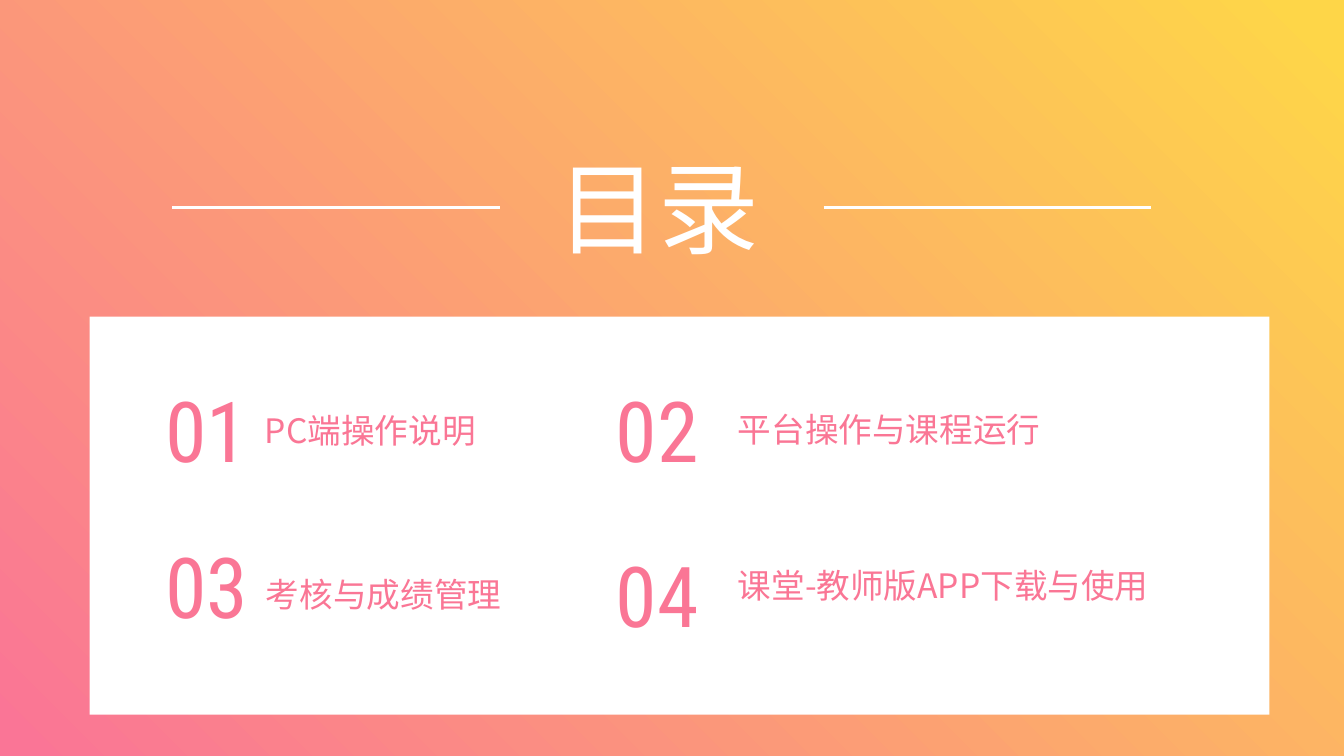
import pptx
import pptx.util
import pptx.dml.color
import pptx.enum.shapes
import pptx.enum.text
import lxml.etree
from dataclasses import dataclass
from pptx.util import Inches, Pt

# Content: number, number top, label, label left, label top, label width
TITLE = "目录"
ENTRIES = [
    ("01", 3.71, "PC端操作说明", 2.53, 4.02, 3.1),
    ("02", 3.71, "平台操作与课程运行", 7.22, 4.01, 4.43),
    ("03", 5.25, "考核与成绩管理", 2.54, 5.64, 3.6),
    ("04", 5.34, "课堂-教师版APP下载与使用", 7.22, 5.56, 4.46),
]
NUMBER_LEFTS = (1.54, 6.01)
RULE_LEFTS = (1.71, 8.17)
RULE_TOP, RULE_LENGTH = 2.06, 3.25


@dataclass(frozen=True)
class Theme:
    white: str = "FFFFFF"
    accent: str = "FA7695"
    gradient: tuple = (("FA7596", 0.01), ("FED648", 0.98))
    text_font: str = "Noto Sans CJK SC"
    number_font: str = "Roboto Condensed"
    title_size: int = 72
    number_size: int = 60
    label_size: int = 24


THEME = Theme()


def color(value):
    return pptx.dml.color.RGBColor.from_string(value)


def write(box, text, font, size, tint):
    frame = box.text_frame
    frame.word_wrap = True
    frame.auto_size = pptx.enum.text.MSO_AUTO_SIZE.SHAPE_TO_FIT_TEXT
    frame.vertical_anchor = pptx.enum.text.MSO_ANCHOR.TOP
    para = frame.paragraphs[0]
    para.alignment = pptx.enum.text.PP_ALIGN.LEFT
    span = para.add_run()
    span.text = text
    span.font.size = Pt(size)
    span.font.color.rgb = color(tint)
    span.font.name = font
    # East Asian characters take their font from a:ea
    east_asian = lxml.etree.SubElement(
        span._r.get_or_add_rPr(), pptx.oxml.ns.qn("a:ea"))
    east_asian.set("typeface", font)


def add_text(page, left, top, width, height, *style):
    box = page.shapes.add_textbox(
        Inches(left), Inches(top), Inches(width), Inches(height))
    write(box, *style)


def add_rule(page, left):
    rule = page.shapes.add_connector(
        pptx.enum.shapes.MSO_CONNECTOR.STRAIGHT,
        Inches(left), Inches(RULE_TOP),
        Inches(left + RULE_LENGTH), Inches(RULE_TOP))
    rule.line.color.rgb = color(THEME.white)
    rule.line.width = Pt(2)
    lxml.etree.SubElement(
        rule._element.spPr, pptx.oxml.ns.qn("a:effectLst"))


def main():
    deck = pptx.Presentation()
    deck.slide_width, deck.slide_height = Inches(13.33), Inches(7.5)
    page = deck.slides.add_slide(deck.slide_layouts.get_by_name("Title Only"))

    # Background gradient, rising to the top right
    backdrop = page.background.fill
    backdrop.gradient()
    backdrop.gradient_angle = 45
    for stop, (tint, position) in zip(backdrop.gradient_stops, THEME.gradient):
        stop.color.rgb = color(tint)
        stop.position = position

    # Title between two rules
    title = page.shapes.title
    title.left, title.top = Inches(5.43), Inches(1.4)
    title.width, title.height = Inches(2.47), Inches(1.28)
    write(title, TITLE, THEME.text_font, THEME.title_size, THEME.white)
    for left in RULE_LEFTS:
        add_rule(page, left)

    # White panel
    panel = page.shapes.add_shape(
        pptx.enum.shapes.MSO_SHAPE.RECTANGLE,
        Inches(0.89), Inches(3.14), Inches(11.7), Inches(3.95))
    panel.shadow.inherit = False
    panel.fill.solid()
    panel.fill.fore_color.rgb = color(THEME.white)
    panel.line.fill.background()

    # Numbered entries in two columns
    for index, (number, number_top, label, left, top, width) in enumerate(ENTRIES):
        add_text(page, NUMBER_LEFTS[index % 2], number_top, 1.15, 1.11,
                 number, THEME.number_font, THEME.number_size, THEME.accent)
        add_text(page, left, top, width, 0.5,
                 label, THEME.text_font, THEME.label_size, THEME.accent)

    deck.save("out.pptx")


if __name__ == "__main__":
    main()
